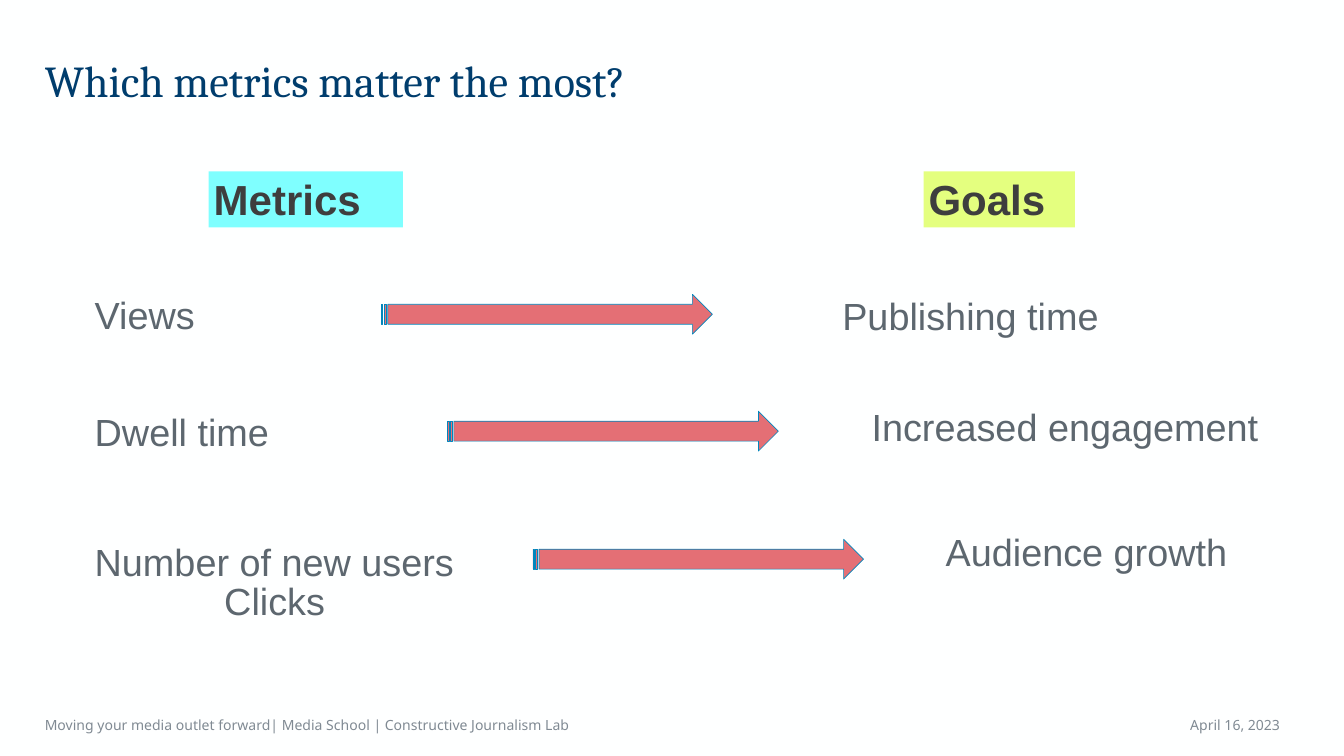
from pptx import Presentation
from pptx.dml.color import RGBColor
from pptx.enum.shapes import MSO_SHAPE
from pptx.enum.text import MSO_ANCHOR, PP_ALIGN
from pptx.util import Inches, Pt

RECTANGLE = MSO_SHAPE.RECTANGLE
STRIPED_ARROW = MSO_SHAPE.STRIPED_RIGHT_ARROW
TOP, MIDDLE = MSO_ANCHOR.TOP, MSO_ANCHOR.MIDDLE
LEFT, RIGHT = PP_ALIGN.LEFT, PP_ALIGN.RIGHT
TITLE_ONLY = 5

# Content
TITLE = "Which metrics matter the most?"
HEADINGS = [  # text, left, width, fill
    ("Metrics", 4.14, 3.85, "7FFFFF"),
    ("Goals", 18.32, 3, "E4FF7F"),
]
LABELS = [  # text, left, top, width
    ("Views", 1.78, 5.74, 3),
    ("Dwell time", 1.78, 8.05, 3.9),
    ("Number of new users", 1.78, 10.63, 9.1),
    ("Clicks", 4.35, 11.42, 3),
    ("Publishing time", 16.61, 5.76, 6.02),
    ("Increased engagement", 17.19, 7.96, 9.47),
    ("Audience growth", 18.66, 10.45, 6.25),
]
ARROWS = [(7.57, 5.84), (8.88, 8.16), (10.57, 10.7)]  # left, top
FOOTERS = [  # text, left, width, alignment
    ("Moving your media outlet forward| Media School | Constructive Journalism Lab",
     0.79, 15.6, LEFT),
    ("April 16, 2023", 20.77, 4.72, RIGHT),
]


def color(hex_string):
    return RGBColor.from_string(hex_string)


def write(shape, text, font, size, hex_color, bold=False,
          align=LEFT, anchor=TOP):
    frame = shape.text_frame
    frame.word_wrap = True
    frame.vertical_anchor = anchor
    frame.margin_left = frame.margin_right = Inches(0.1)
    frame.margin_top = frame.margin_bottom = Inches(0.05)
    paragraph = frame.paragraphs[0]
    paragraph.text = text
    paragraph.alignment = align
    paragraph.font.name = font
    paragraph.font.size = Pt(size)
    paragraph.font.bold = bold
    paragraph.font.color.rgb = color(hex_color)
    return paragraph


def add_filled_shape(slide, kind, left, top, width, height, fill, line=None):
    shape = slide.shapes.add_shape(
        kind, Inches(left), Inches(top), Inches(width), Inches(height))
    shape.shadow.inherit = False
    shape.fill.solid()
    shape.fill.fore_color.rgb = color(fill)
    if line:
        shape.line.color.rgb = color(line)
        shape.line.width = Pt(1)
    else:
        shape.line.fill.background()
    return shape


def add_text_box(slide, left, top, width, height):
    return slide.shapes.add_textbox(
        Inches(left), Inches(top), Inches(width), Inches(height))


def main():
    presentation = Presentation()
    presentation.slide_width = Inches(26.66)
    presentation.slide_height = Inches(15)
    slide = presentation.slides.add_slide(presentation.slide_layouts[TITLE_ONLY])
    slide.background.fill.solid()
    slide.background.fill.fore_color.rgb = color("FEFFFF")

    # Title
    title = slide.shapes.title
    title.left, title.top = Inches(0.79), Inches(0.79)
    title.width, title.height = Inches(24.71), Inches(1.28)
    paragraph = write(title, TITLE, "Cambria", 63, "003D6D")
    paragraph.line_spacing = Pt(91)

    # Footer
    for text, left, width, align in FOOTERS:
        box = add_text_box(slide, left, 14.07, width, 0.63)
        write(box, text, "Noto Sans", 20, "808A93", align=align, anchor=MIDDLE)

    # Column headings
    for text, left, width, fill in HEADINGS:
        heading = add_filled_shape(slide, RECTANGLE, left, 3.4, width, 1.11, fill)
        write(heading, text, "Arial", 60, "3E3E3E", bold=True)

    # Arrows from metrics to goals
    for left, top in ARROWS:
        add_filled_shape(slide, STRIPED_ARROW, left, top, 6.56, 0.79,
                         "E46F75", line="0086BD")

    # Metrics and goals
    for text, left, top, width in LABELS:
        box = add_text_box(slide, left, top, width, 1.01)
        write(box, text, "Arial", 54, "5D676F")

    presentation.save("out.pptx")


if __name__ == "__main__":
    main()
